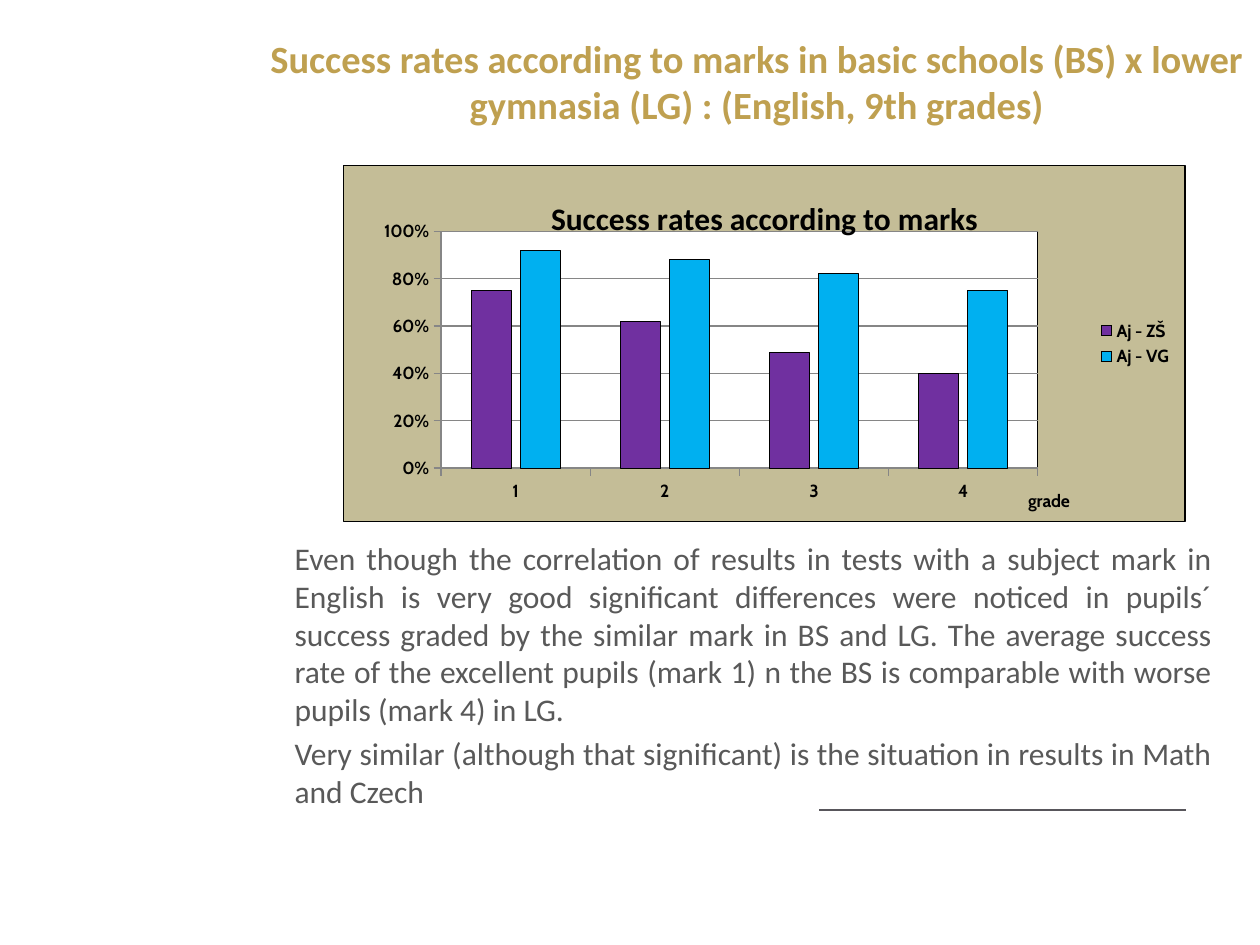
from lxml import etree
from pptx import Presentation
from pptx.chart.data import CategoryChartData
from pptx.dml.color import RGBColor
from pptx.enum.chart import XL_CHART_TYPE, XL_LEGEND_POSITION, XL_TICK_MARK
from pptx.enum.shapes import MSO_CONNECTOR
from pptx.enum.text import MSO_ANCHOR, MSO_AUTO_SIZE, PP_ALIGN
from pptx.oxml import parse_xml
from pptx.oxml.ns import qn
from pptx.util import Cm, Pt

CLUSTERED = XL_CHART_TYPE.COLUMN_CLUSTERED
LEGEND_RIGHT = XL_LEGEND_POSITION.RIGHT
TICK_OUTSIDE = XL_TICK_MARK.OUTSIDE
STRAIGHT = MSO_CONNECTOR.STRAIGHT
MIDDLE, TOP = MSO_ANCHOR.MIDDLE, MSO_ANCHOR.TOP
NO_AUTOFIT = MSO_AUTO_SIZE.NONE
CENTER, JUSTIFY = PP_ALIGN.CENTER, PP_ALIGN.JUSTIFY

BLACK = RGBColor(0x00, 0x00, 0x00)
WHITE = RGBColor(0xFF, 0xFF, 0xFF)
GOLD = RGBColor(0xBF, 0xA0, 0x50)
GREY = RGBColor(0x59, 0x59, 0x59)
RULE = RGBColor(0x58, 0x56, 0x5B)
GRID = RGBColor(0x86, 0x86, 0x86)
TAN = RGBColor(0xC4, 0xBD, 0x97)
PURPLE = RGBColor(0x70, 0x30, 0xA0)
BLUE = RGBColor(0x00, 0xB0, 0xF0)

NAMESPACES = (
    'xmlns:c="http://schemas.openxmlformats.org/drawingml/2006/chart" '
    'xmlns:a="http://schemas.openxmlformats.org/drawingml/2006/main"'
)

TITLE = (
    "Success rates according to marks in basic schools (BS) x lower "
    "gymnasia (LG) : (English, 9th grades)"
)
COMMENTARY = [
    "Even though the correlation of results in tests with a subject mark in "
    "English is very good significant differences were noticed in pupils´ "
    "success graded by the similar mark in BS and LG. The average success "
    "rate of the excellent pupils (mark 1) n the BS is comparable with worse "
    "pupils (mark 4) in LG. ",
    "Very similar (although that significant) is the situation in results "
    "in Math and Czech ",
]
GRADES = ["1", "2", "3", "4"]
SUCCESS_RATES = [
    ("Aj - ZŠ", [0.75, 0.62, 0.49, 0.4], PURPLE),
    ("Aj - VG", [0.92, 0.88, 0.82, 0.75], BLUE),
]


def area_properties(fill):
    return parse_xml(
        f'<c:spPr {NAMESPACES}><a:solidFill><a:srgbClr val="{fill}"/></a:solidFill>'
        f'<a:ln w="{Pt(0.75)}"><a:solidFill><a:srgbClr val="{BLACK}"/>'
        "</a:solidFill></a:ln></c:spPr>"
    )


def manual_layout(x, y, size=None):
    values = [("xMode", "edge"), ("yMode", "edge"), ("x", x), ("y", y)]
    if size:
        values.insert(0, ("layoutTarget", "inner"))
        values += [("w", size[0]), ("h", size[1])]
    children = "".join(f'<c:{name} val="{value}"/>' for name, value in values)
    return parse_xml(
        f"<c:layout {NAMESPACES}><c:manualLayout>{children}</c:manualLayout></c:layout>"
    )


class SlideBuilder:
    text_font = "Calibri"
    label_font = "Cabin"

    def __init__(self, slide):
        self.slide = slide

    def set_font(self, font, name, size, color, bold=False):
        font.name = name
        font.size = Pt(size)
        font.bold = bold
        font.color.rgb = color

    def fill_text(self, shape, texts, size, color, alignment, anchor, bold=False):
        frame = shape.text_frame
        frame.word_wrap = True
        frame.auto_size = NO_AUTOFIT
        frame.vertical_anchor = anchor
        for index, text in enumerate(texts):
            paragraph = frame.add_paragraph() if index else frame.paragraphs[0]
            paragraph.alignment = alignment
            paragraph.space_before = Pt(size * 0.2 if index else 0)
            run = paragraph.add_run()
            run.text = text
            self.set_font(run.font, self.text_font, size, color, bold)

    def title(self, text, left, top, width, height):
        shape = self.slide.shapes.title
        shape.left, shape.top = Cm(left), Cm(top)
        shape.width, shape.height = Cm(width), Cm(height)
        self.fill_text(shape, [text], 22, GOLD, CENTER, MIDDLE, bold=True)

    def text(self, texts, left, top, width, height):
        shape = self.slide.shapes.add_textbox(Cm(left), Cm(top), Cm(width), Cm(height))
        self.fill_text(shape, texts, 18, GREY, JUSTIFY, TOP)

    def rule(self, start, end, y):
        line = self.slide.shapes.add_connector(STRAIGHT, Cm(start), Cm(y), Cm(end), Cm(y))
        line.line.color.rgb = RULE
        line.line.width = Pt(0.75)
        etree.SubElement(line._element.spPr, qn("a:effectLst"))

    def chart_title(self, owner, text, font_name, size, x, y):
        title = owner.chart_title if hasattr(owner, "chart_title") else owner.axis_title
        run = title.text_frame.paragraphs[0].add_run()
        run.text = text
        self.set_font(run.font, font_name, size, BLACK, bold=True)
        element = title._element
        for layout in element.findall(qn("c:layout")):
            element.remove(layout)
        element.find(qn("c:tx")).addnext(manual_layout(x, y))

    def style_axis(self, axis):
        axis.major_tick_mark = TICK_OUTSIDE
        axis.format.line.color.rgb = GRID
        axis.format.line.width = Pt(0.75)
        self.set_font(axis.tick_labels.font, self.label_font, 10, BLACK, bold=True)

    def column_chart(self, categories, rows, left, top, width, height):
        data = CategoryChartData(number_format="0%")
        data.categories = categories
        for name, values, _ in rows:
            data.add_series(name, values)
        chart = self.slide.shapes.add_chart(
            CLUSTERED, Cm(left), Cm(top), Cm(width), Cm(height), data
        ).chart
        self.set_font(chart.font, self.text_font, 10, BLACK)
        self.chart_title(chart, "Success rates according to marks", self.text_font, 18, 0.24, 0.07)

        plot = chart.plots[0]
        plot.vary_by_categories = False
        plot.gap_width = 150
        plot.overlap = -23
        for series, (_, _, color) in zip(plot.series, rows):
            series.format.fill.solid()
            series.format.fill.fore_color.rgb = color
            series.format.line.color.rgb = BLACK
            series.format.line.width = Pt(0.5)

        self.style_axis(chart.category_axis)
        self.chart_title(chart.category_axis, "grade", self.label_font, 10, 0.81, 0.9)
        value_axis = chart.value_axis
        self.style_axis(value_axis)
        value_axis.minimum_scale, value_axis.maximum_scale = 0, 1
        value_axis.major_unit = 0.2
        value_axis.tick_labels.number_format = "0%"
        value_axis.tick_labels.number_format_is_linked = False
        value_axis.major_gridlines.format.line.color.rgb = GRID
        value_axis.major_gridlines.format.line.width = Pt(0.75)

        chart.has_legend = True
        chart.legend.position = LEGEND_RIGHT
        chart.legend.include_in_layout = False
        self.set_font(chart.legend.font, self.label_font, 10, BLACK, bold=True)

        chart_element = chart._chartSpace.find(qn("c:chart"))
        chart_element.addnext(area_properties(TAN))
        plot_area = chart_element.find(qn("c:plotArea"))
        for layout in plot_area.findall(qn("c:layout")):
            plot_area.remove(layout)
        plot_area.insert(0, manual_layout(0.116, 0.184, (0.709, 0.667)))
        plot_area.append(area_properties(WHITE))


def main():
    presentation = Presentation()
    presentation.slide_width, presentation.slide_height = Cm(25.4), Cm(19.05)
    builder = SlideBuilder(presentation.slides.add_slide(presentation.slide_layouts[5]))
    builder.rule(23.9, 16.51, 16.33)
    builder.title(TITLE, 5.11, 0.53, 20.29, 2.21)
    builder.text(COMMENTARY, 5.69, 10.74, 19, 5.39)
    builder.column_chart(GRADES, SUCCESS_RATES, 6.91, 3.33, 16.99, 7.19)
    presentation.save("out.pptx")


if __name__ == "__main__":
    main()
